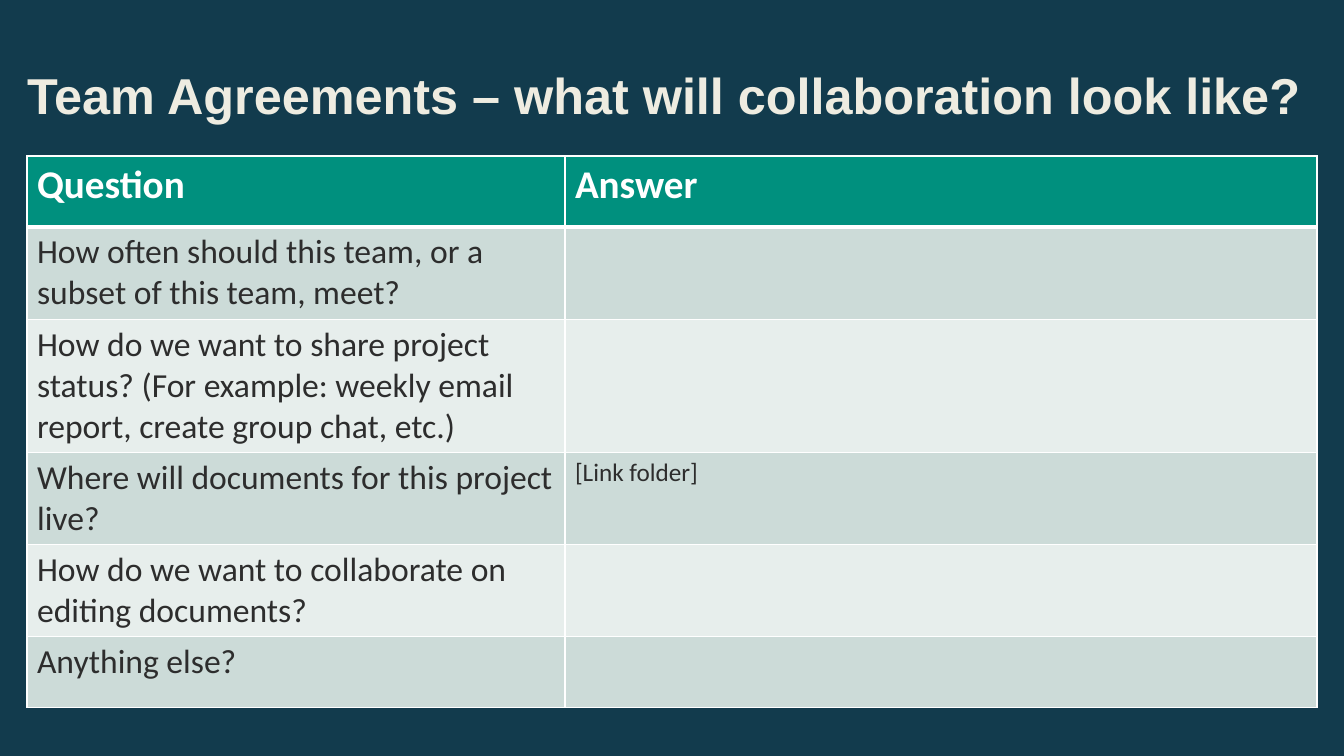
import pptx
import pptx.util
import pptx.dml.color
import pptx.enum.text
import pptx.oxml.ns
from lxml import etree

SCALE = 914400 / 100.8
ROWS = [
    ("Question", "Answer"),
    ("How often should this team, or a subset of this team, meet?", ""),
    ("How do we want to share project status? (For example: weekly email "
     "report, create group chat, etc.)", ""),
    ("Where will documents for this project live?", "[Link folder]"),
    ("How do we want to collaborate on editing documents?", ""),
    ("Anything else?", ""),
]
COLS = [538, 752]
HEIGHTS = [71, 86, 127, 86, 86, 71]


def px(n):
    return round(n * SCALE)


def paint(fill, hue):
    fill.solid()
    fill.fore_color.rgb = pptx.dml.color.RGBColor.from_string(hue)


def style(para, size, hue, face, bold=False):
    font = para.font
    font.size, font.name, font.bold = pptx.util.Pt(size), face, bold
    paint(font.fill, hue)


def edge(cell, side, width, hue="FFFFFF"):
    qn = pptx.oxml.ns.qn
    props = cell._tc.get_or_add_tcPr()
    line = etree.SubElement(props, qn("a:ln" + side), w=str(pptx.util.Pt(width)))
    solid = etree.SubElement(line, qn("a:solidFill"))
    etree.SubElement(solid, qn("a:srgbClr"), val=hue)


# Heading
def add_title(slide, x, y, w, h):
    title = slide.shapes.title
    title.left, title.top, title.width, title.height = map(px, (x, y, w, h))
    frame = title.text_frame
    frame.word_wrap = True
    frame.vertical_anchor = pptx.enum.text.MSO_ANCHOR.MIDDLE
    para = frame.paragraphs[0]
    para.text = "Team Agreements – what will collaboration look like?"
    para.alignment = pptx.enum.text.PP_ALIGN.LEFT
    style(para, 36, "EEECE1", "Arial", True)


# Question and answer grid
def add_grid(slide, x, y):
    table = slide.shapes.add_table(
        len(ROWS), len(COLS), px(x), px(y), px(sum(COLS)), px(sum(HEIGHTS))).table
    for col, width in zip(table.columns, COLS):
        col.width = px(width)
    for r, texts in enumerate(ROWS):
        table.rows[r].height = px(HEIGHTS[r])
        head = r == 0
        for c, text in enumerate(texts):
            cell = table.cell(r, c)
            # A thick rule parts the header from the first row
            for side, width in (("L", 1), ("R", 1),
                                ("T", 3 if r == 1 else 1), ("B", 3 if head else 1)):
                edge(cell, side, width)
            paint(cell.fill, "00907E" if head else ("E7EEEC", "CCDBD8")[r % 2])
            para = cell.text_frame.paragraphs[0]
            para.text = text
            if head:
                style(para, 28, "FFFFFF", "Calibri", True)
            else:
                style(para, 18 if c else 24, "2D2D2D", "Calibri")


def main():
    deck = pptx.Presentation()
    deck.slide_width, deck.slide_height = px(1344), px(756)
    slide = deck.slides.add_slide(deck.slide_layouts[5])
    paint(slide.background.fill, "123B4D")
    add_title(slide, 17, 33, 1310, 123)
    add_grid(slide, 27, 156)
    deck.save("out.pptx")


if __name__ == "__main__":
    main()
